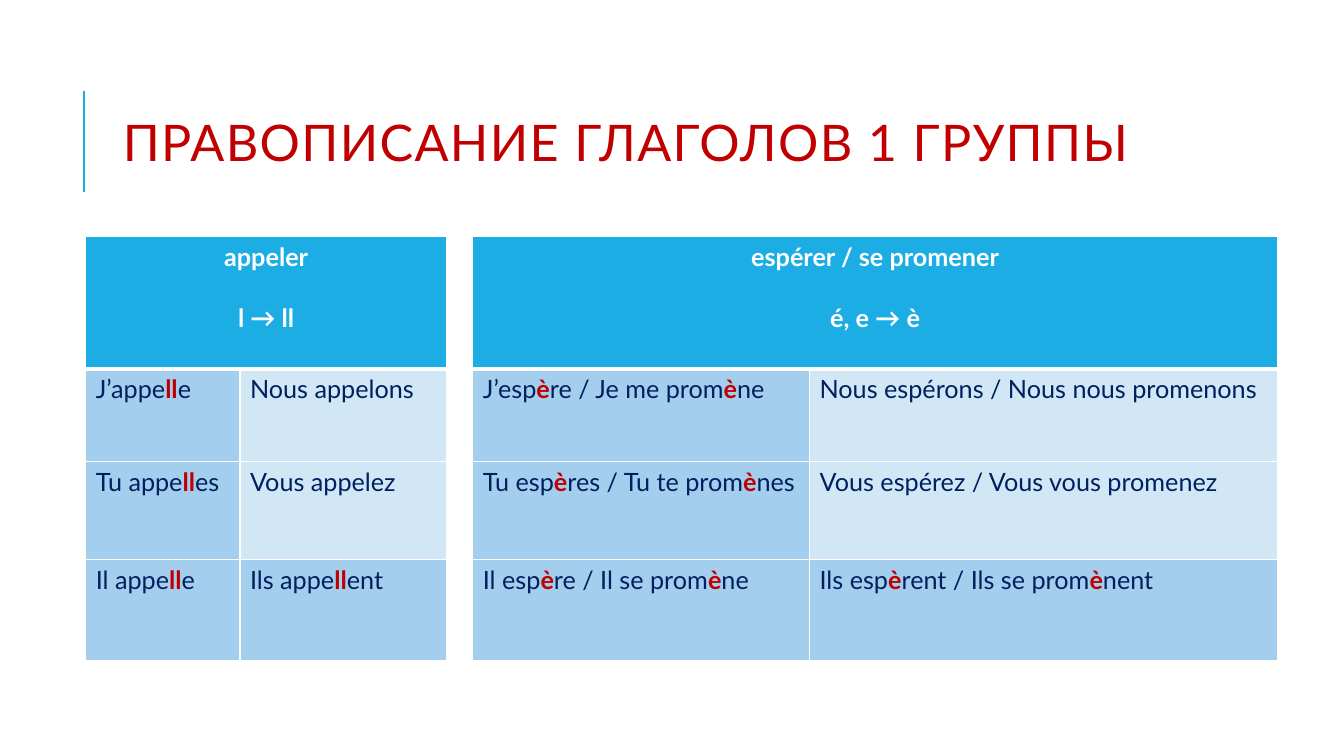
"""Build a slide on the spelling of French verbs of the first group."""
from lxml import etree
from pptx import Presentation
from pptx.dml.color import RGBColor
from pptx.enum.shapes import MSO_CONNECTOR
from pptx.enum.text import MSO_ANCHOR, PP_ALIGN
from pptx.oxml.ns import qn
from pptx.util import Inches, Pt

STRAIGHT = MSO_CONNECTOR.STRAIGHT
MIDDLE = MSO_ANCHOR.MIDDLE
LEFT, CENTER = PP_ALIGN.LEFT, PP_ALIGN.CENTER
WHITE = RGBColor(0xFF, 0xFF, 0xFF)
ACCENT = RGBColor(0x1C, 0xAD, 0xE4)
STRONG_BAND = RGBColor(0xA3, 0xCE, 0xED)
PALE_BAND = RGBColor(0xD1, 0xE7, 0xF6)
NAVY = RGBColor(0x00, 0x20, 0x60)
RED = RGBColor(0xC0, 0x00, 0x00)

COLUMN_WIDTHS = [1.53, 2.05, 0.26, 3.34, 4.64]
ROW_HEIGHTS = [1.31, 0.92, 0.97, 1]
GAP_COLUMN = 2
HEADERS = {0: ["appeler", "l → ll"], 3: ["espérer / se promener", "é, e → è"]}
CONJUGATION = [
    ["J’appe*ll*e", "Nous appelons", "",
     "J’esp*è*re / Je me prom*è*ne", "Nous espérons / Nous nous promenons"],
    ["Tu appe*ll*es", "Vous appelez", "",
     "Tu esp*è*res / Tu te prom*è*nes", "Vous espérez / Vous vous promenez"],
    ["Il appe*ll*e", "Ils appe*ll*ent", "",
     "Il esp*è*re / Il se prom*è*ne", "Ils esp*è*rent / Ils se prom*è*nent"],
]


def write(paragraph, text, size=18, color=NAVY, bold=False, align=LEFT, tracking=0):
    """Write text, with the parts between asterisks in bold red."""
    paragraph.alignment = align
    for index, part in enumerate(text.split("*")):
        marked = index % 2 == 1
        run = paragraph.add_run()
        run.text = part
        run.font.name = "Lato"
        run.font.size = Pt(size)
        run.font.bold = bold or marked
        run.font.color.rgb = RED if marked else color
        if tracking:
            run._r.get_or_add_rPr().set("spc", str(tracking * 100))


def add_borders(cell, top, bottom):
    """Give the cell white borders, with widths in points."""
    properties = cell._tc.get_or_add_tcPr()
    sides = {"a:lnL": 1, "a:lnR": 1, "a:lnT": top, "a:lnB": bottom}
    for index, (side, width) in enumerate(sides.items()):
        line = etree.Element(qn(side), w=str(Pt(width)))
        fill = etree.SubElement(line, qn("a:solidFill"))
        etree.SubElement(fill, qn("a:srgbClr"), val=str(WHITE))
        properties.insert(index, line)


presentation = Presentation()
presentation.slide_width = Inches(13.33)
presentation.slide_height = Inches(7.5)
slide = presentation.slides.add_slide(presentation.slide_layouts[6])

title_rule = slide.shapes.add_connector(
    STRAIGHT, Inches(0.83), Inches(1.9), Inches(0.83), Inches(0.9))
title_rule.line.color.rgb = ACCENT
title_rule.line.width = Pt(1.5)
etree.SubElement(title_rule._element.spPr, qn("a:effectLst"))

title = slide.shapes.add_textbox(Inches(1.12), Inches(0.64), Inches(10.63), Inches(1.64))
title.text_frame.word_wrap = True
title.text_frame.vertical_anchor = MIDDLE
title_paragraph = title.text_frame.paragraphs[0]
title_paragraph.line_spacing = 0.8
write(title_paragraph, "ПРАВОПИСАНИЕ ГЛАГОЛОВ 1 ГРУППЫ", size=36, color=RED, tracking=1)

table = slide.shapes.add_table(
    len(ROW_HEIGHTS), len(COLUMN_WIDTHS), Inches(0.85), Inches(2.35),
    Inches(sum(COLUMN_WIDTHS)), Inches(sum(ROW_HEIGHTS))).table
table.first_row = False
table.horz_banding = False
for column, width in zip(table.columns, COLUMN_WIDTHS):
    column.width = Inches(width)
for row, height in zip(table.rows, ROW_HEIGHTS):
    row.height = Inches(height)

for row_index in range(len(ROW_HEIGHTS)):
    for column_index in range(len(COLUMN_WIDTHS)):
        cell = table.cell(row_index, column_index)
        add_borders(cell, top=3 if row_index == 1 else 1, bottom=3 if row_index == 0 else 1)
        if column_index == GAP_COLUMN:
            cell.fill.background()
            continue
        cell.fill.solid()
        if row_index == 0:
            cell.fill.fore_color.rgb = ACCENT
            continue
        text = CONJUGATION[row_index - 1][column_index]
        cell.fill.fore_color.rgb = STRONG_BAND if "*" in text else PALE_BAND
        write(cell.text_frame.paragraphs[0], text)

for column_index, (verb, rule) in HEADERS.items():
    header = table.cell(0, column_index)
    header.merge(table.cell(0, column_index + 1))
    write(header.text_frame.paragraphs[0], verb, color=WHITE, bold=True, align=CENTER)
    rule_paragraph = header.text_frame.add_paragraph()
    rule_paragraph.space_before = Pt(21.6)
    write(rule_paragraph, rule, color=WHITE, bold=True, align=CENTER)

presentation.save("out.pptx")
